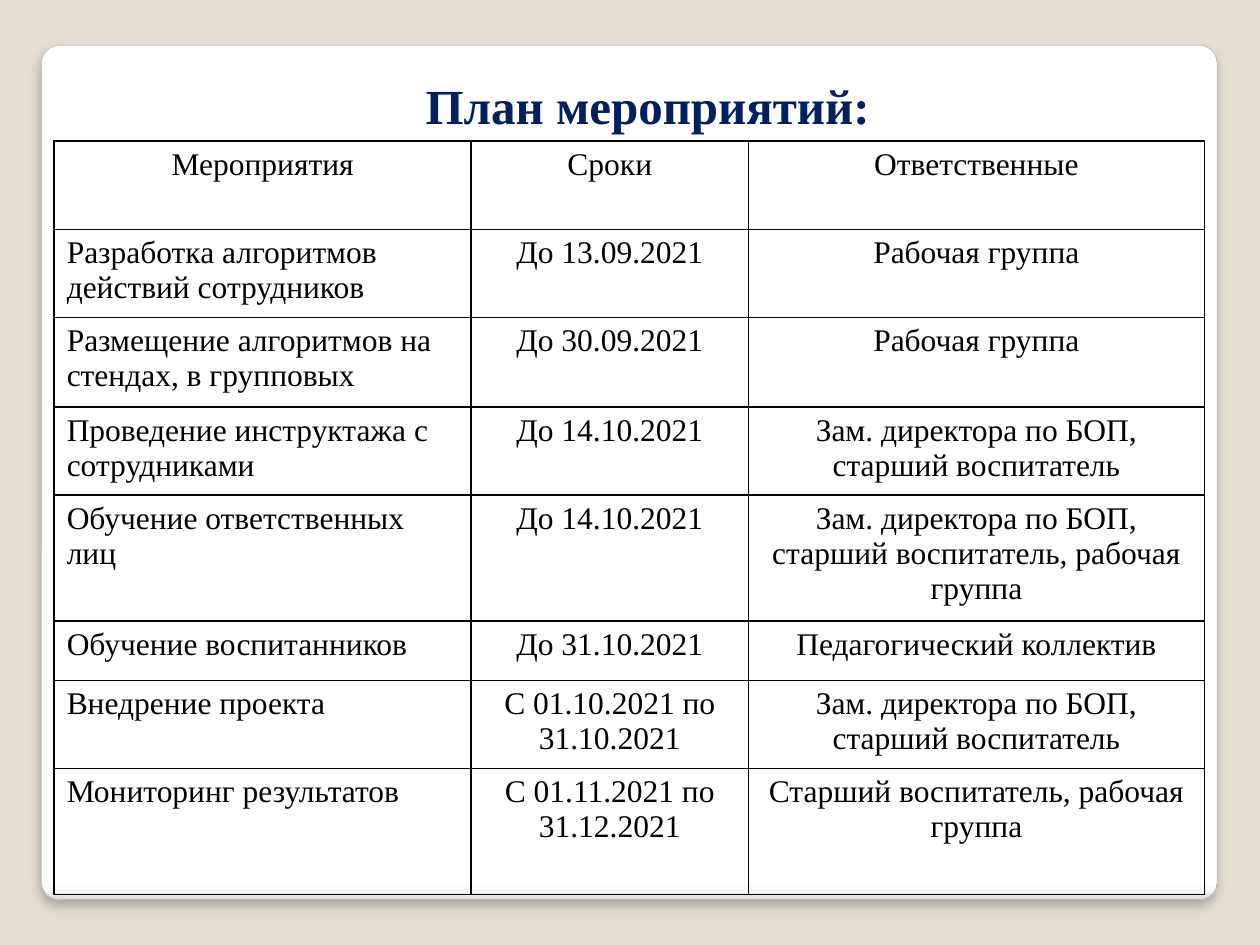
import pptx
import pptx.dml.color
import pptx.enum.shapes
import pptx.enum.text
import pptx.oxml
import pptx.oxml.ns
import pptx.util

Inches = pptx.util.Inches
Pt = pptx.util.Pt
RGBColor = pptx.dml.color.RGBColor
ALIGN = pptx.enum.text.PP_ALIGN
ANCHOR = pptx.enum.text.MSO_ANCHOR
NS = pptx.oxml.ns.nsdecls("a")

SAND = RGBColor(0xE3, 0xDE, 0xD1)
WHITE = RGBColor(0xFF, 0xFF, 0xFF)
PALE = RGBColor(0xF7, 0xF7, 0xF7)
SILVER = RGBColor(0xDA, 0xDA, 0xDA)
GREY = RGBColor(0xA4, 0xA4, 0xA4)
BLACK = RGBColor(0, 0, 0)
NAVY = RGBColor(0x00, 0x20, 0x60)

FACE = "Times New Roman"
HEAD = {"name": FACE, "size": Pt(28), "bold": True}
BODY = {"name": FACE, "size": Pt(18), "bold": False}
STOPS = [(0, WHITE), (98, WHITE), (99, PALE), (100, SILVER)]

COLS = [3.31, 2.2, 3.62]
PLAN = [
    (0.7, "Мероприятия", "Сроки", "Ответственные"),
    (0.7, "Разработка алгоритмов действий сотрудников",
     "До 13.09.2021", "Рабочая группа"),
    (0.71, "Размещение алгоритмов на стендах, в групповых",
     "До 30.09.2021", "Рабочая группа"),
    (0.7, "Проведение инструктажа с сотрудниками",
     "До 14.10.2021", "Зам. директора по БОП, старший воспитатель"),
    (1, "Обучение ответственных лиц", "До 14.10.2021",
     "Зам. директора по БОП, старший воспитатель, рабочая группа"),
    (0.47, "Обучение воспитанников",
     "До 31.10.2021", "Педагогический коллектив"),
    (0.7, "Внедрение проекта", "С 01.10.2021 по 31.10.2021",
     "Зам. директора по БОП, старший воспитатель"),
    (1, "Мониторинг результатов", "С 01.11.2021 по 31.12.2021",
     "Старший воспитатель, рабочая группа"),
]


def apply(item, values):
    for name, value in values.items():
        setattr(item, name, value)


def write(frame, text, style, color, align):
    frame.text = text
    para = frame.paragraphs[0]
    para.alignment = align
    font = para.runs[0].font
    apply(font, style)
    font.color.rgb = color


def add_card(slide):
    card = slide.shapes.add_shape(
        pptx.enum.shapes.MSO_SHAPE.ROUNDED_RECTANGLE,
        Inches(0.33), Inches(0.36), Inches(9.33), Inches(6.78))
    card.adjustments[0] = 0.021
    card.line.color.rgb = GREY
    card.line.width = Pt(0.16)
    stops = "".join(
        f'<a:gs pos="{pos * 1000}"><a:srgbClr val="{color}"/></a:gs>'
        for pos, color in STOPS)
    props = card.element.spPr
    props.insert(2, pptx.oxml.parse_xml(
        f'<a:gradFill {NS}><a:gsLst>{stops}</a:gsLst>'
        '<a:lin ang="5400000" scaled="0"/></a:gradFill>'))
    props.append(pptx.oxml.parse_xml(
        f'<a:effectLst {NS}><a:outerShdw blurRad="{Pt(6)}" dist="{Pt(4)}" '
        f'dir="5400000" rotWithShape="0"><a:srgbClr val="{BLACK}">'
        '<a:alpha val="25000"/></a:srgbClr></a:outerShdw></a:effectLst>'))


def add_edges(cell):
    props = cell._tc.get_or_add_tcPr()
    for side in ("lnL", "lnR", "lnT", "lnB"):
        props.append(pptx.oxml.parse_xml(
            f'<a:{side} {NS} w="{Pt(1)}"><a:solidFill>'
            f'<a:srgbClr val="{BLACK}"/></a:solidFill></a:{side}>'))


def add_plan(slide):
    high = sum(row[0] for row in PLAN)
    table = slide.shapes.add_table(
        len(PLAN), len(COLS), Inches(0.43), Inches(1.12),
        Inches(sum(COLS)), Inches(high)).table
    apply(table, {"first_row": False, "horz_banding": False})
    for col, wide in zip(table.columns, COLS):
        col.width = Inches(wide)
    for r, (tall, *texts) in enumerate(PLAN):
        table.rows[r].height = Inches(tall)
        for c, text in enumerate(texts):
            cell = table.cell(r, c)
            align = ALIGN.LEFT if r and c == 0 else ALIGN.CENTER
            write(cell.text_frame, text, BODY, BLACK, align)
            add_edges(cell)
            cell.fill.background()


def set_title(slide):
    title = slide.shapes.title
    apply(title, {"left": Inches(1.9), "top": Inches(0.55),
                  "width": Inches(6.48), "height": Inches(0.57)})
    frame = title.text_frame
    apply(frame, {"word_wrap": True, "vertical_anchor": ANCHOR.MIDDLE,
                  "auto_size": pptx.enum.text.MSO_AUTO_SIZE.NONE})
    write(frame, "План мероприятий:", HEAD, NAVY, ALIGN.CENTER)
    slide.shapes.element.append(title.element)


def main():
    deck = pptx.Presentation()
    apply(deck, {"slide_width": Inches(10), "slide_height": Inches(7.5)})
    slide = deck.slides.add_slide(deck.slide_layouts[5])
    back = slide.background.fill
    back.solid()
    back.fore_color.rgb = SAND
    add_card(slide)
    add_plan(slide)
    set_title(slide)
    deck.save("out.pptx")


if __name__ == "__main__":
    main()
